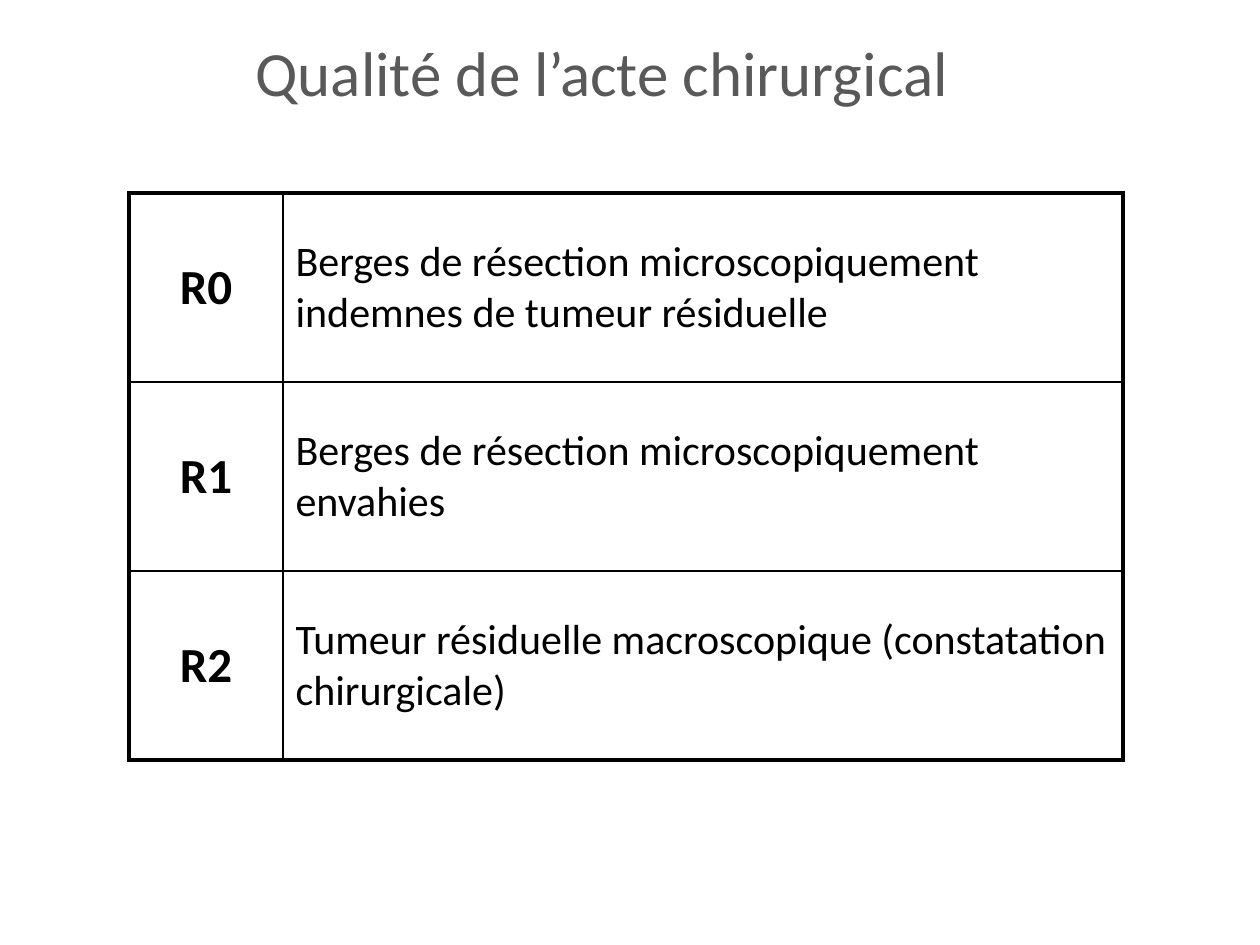
from dataclasses import dataclass

from lxml.etree import SubElement
from pptx import Presentation
from pptx.dml.color import RGBColor
from pptx.enum.text import MSO_ANCHOR, PP_ALIGN
from pptx.oxml.ns import qn
from pptx.util import Pt

EMU_PER_PX = 914400 / 126


@dataclass(frozen=True)
class Theme:
    font: str = "Calibri"
    title_color: str = "595959"
    ink: str = "000000"
    title_size: int = 36
    grade_size: int = 28
    meaning_size: int = 24
    outer_line: float = 2.25
    inner_line: float = 1


THEME = Theme()

RESECTION_GRADES = [
    ("R0", "Berges de résection microscopiquement indemnes de tumeur résiduelle"),
    ("R1", "Berges de résection microscopiquement envahies"),
    ("R2", "Tumeur résiduelle macroscopique (constatation chirurgicale)"),
]


def px(length):
    return round(length * EMU_PER_PX)


def write_text(frame, text, *, size, color=THEME.ink, bold=False, align=PP_ALIGN.LEFT):
    frame.word_wrap = True
    para = frame.paragraphs[0]
    para.alignment = align
    span = para.add_run()
    span.text = text
    span.font.name = THEME.font
    span.font.size = Pt(size)
    span.font.bold = bold
    span.font.color.rgb = RGBColor.from_string(color)


def set_borders(cell, widths):
    """Draw the cell's lines; widths maps L, R, T, B (in that order) to points."""
    properties = cell._tc.get_or_add_tcPr()
    for side, width in widths.items():
        line = SubElement(properties, qn(f"a:ln{side}"), w=str(Pt(width)))
        fill = SubElement(line, qn("a:solidFill"))
        SubElement(fill, qn("a:srgbClr"), val=THEME.ink)


def add_title(page, left, top, width, height):
    box = page.shapes.add_textbox(px(left), px(top), px(width), px(height))
    box.text_frame.vertical_anchor = MSO_ANCHOR.MIDDLE
    write_text(box.text_frame, "Qualité de l’acte chirurgical", size=THEME.title_size,
               color=THEME.title_color, align=PP_ALIGN.CENTER)


def add_grade_table(page, left, top, width, height, grade_width):
    row_count, column_count = len(RESECTION_GRADES), 2
    table = page.shapes.add_table(row_count, column_count, px(left), px(top),
                                  px(width), px(height)).table
    table.first_row = table.horz_banding = False
    table.columns[0].width = px(grade_width)
    table.columns[1].width = px(width - grade_width)

    formats = [
        dict(size=THEME.grade_size, bold=True, align=PP_ALIGN.CENTER),
        dict(size=THEME.meaning_size),
    ]
    for row, texts in enumerate(RESECTION_GRADES):
        table.rows[row].height = px(height / row_count)
        for column, text in enumerate(texts):
            cell = table.cell(row, column)
            cell.vertical_anchor = MSO_ANCHOR.MIDDLE
            write_text(cell.text_frame, text, **formats[column])
            # Thick frame around the table, thin lines inside
            on_edge = {"L": column == 0, "R": column == column_count - 1,
                       "T": row == 0, "B": row == row_count - 1}
            set_borders(cell, {side: THEME.outer_line if edge else THEME.inner_line
                               for side, edge in on_edge.items()})
            cell.fill.background()


def main():
    deck = Presentation()
    deck.slide_width, deck.slide_height = px(1260), px(945)
    page = deck.slides.add_slide(deck.slide_layouts[6])
    add_title(page, 35, 17, 1134, 109)
    add_grade_table(page, 129, 193, 994, 567, grade_width=154)
    deck.save("out.pptx")


if __name__ == "__main__":
    main()
